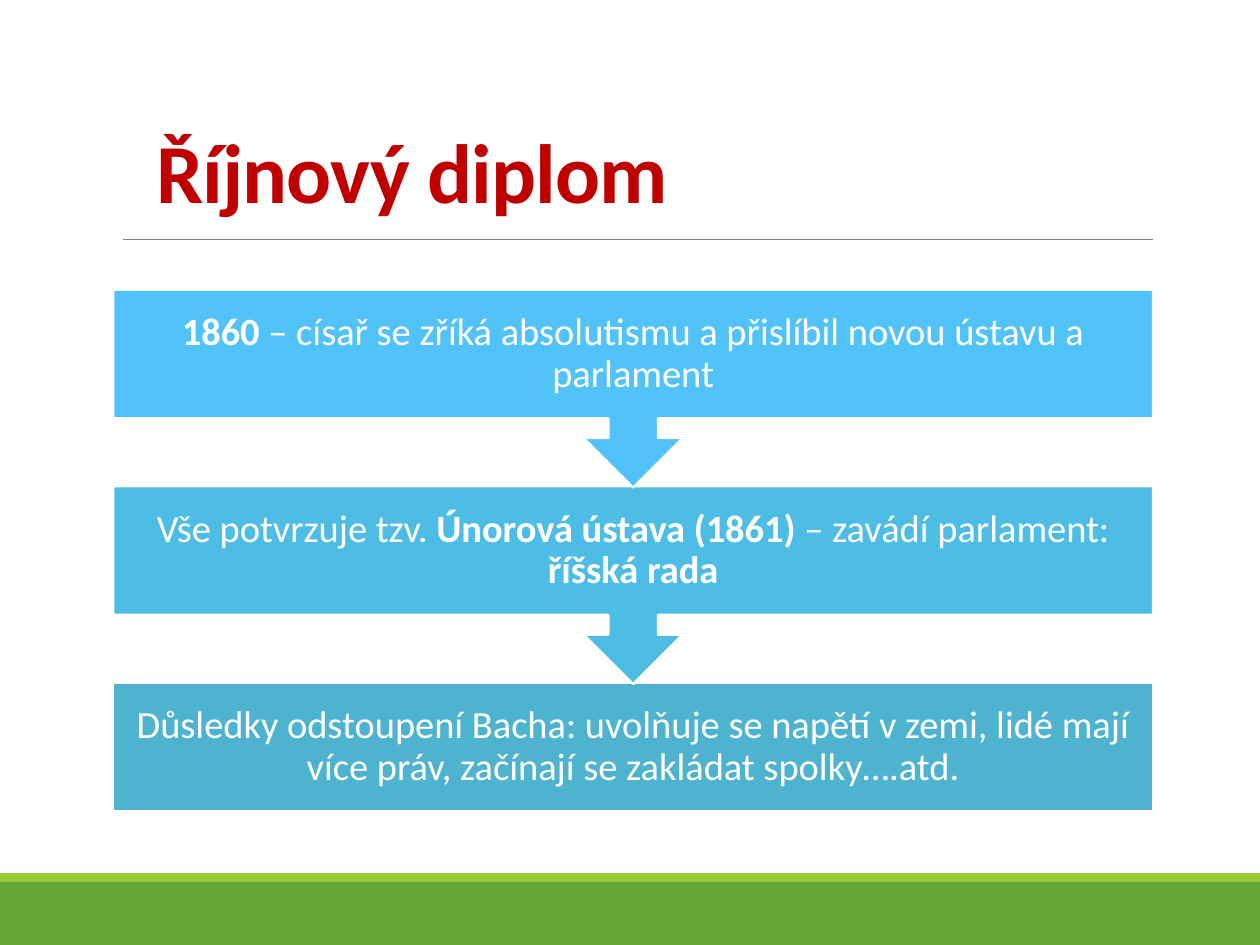
import pptx
import pptx.util
from lxml import etree
from pptx.dml.color import RGBColor
from pptx.enum.shapes import MSO_CONNECTOR, MSO_SHAPE
from pptx.enum.text import MSO_ANCHOR, PP_ALIGN
from pptx.oxml.ns import qn
from pptx.util import Inches


class Theme:
    font = "Calibri"
    title_size = pptx.util.Pt(48)
    body_size = pptx.util.Pt(22)
    title = RGBColor.from_string("C00000")
    white = RGBColor.from_string("FFFFFF")
    rule = RGBColor.from_string("808080")
    footer = RGBColor.from_string("63A537")
    footer_edge = RGBColor.from_string("99CB38")
    steps = [RGBColor.from_string(code) for code in ("51C3F9", "4DBDE6", "4EB3CF")]


def add_filled_shape(kind, left, top, width, height, color):
    shape = slide.shapes.add_shape(
        kind, Inches(left), Inches(top), Inches(width), Inches(height))
    shape.shadow.inherit = False
    shape.fill.solid()
    shape.fill.fore_color.rgb = color
    shape.line.fill.background()
    return shape


presentation = pptx.Presentation()
presentation.slide_width = Inches(10)
presentation.slide_height = Inches(7.5)
slide = presentation.slides.add_slide(presentation.slide_layouts[6])

# Footer bands and the rule under the title
add_filled_shape(MSO_SHAPE.RECTANGLE, 0, 7, 10, 0.5, Theme.footer)
add_filled_shape(MSO_SHAPE.RECTANGLE, 0, 6.93, 10, 0.07, Theme.footer_edge)
rule = slide.shapes.add_connector(
    MSO_CONNECTOR.STRAIGHT, Inches(0.98), Inches(1.9), Inches(9.15), Inches(1.9))
rule.line.color.rgb = Theme.rule
rule.line.width = pptx.util.Pt(0.5)
etree.SubElement(rule._element.spPr, qn("a:effectLst"))

# Title
title = slide.shapes.add_textbox(Inches(1.14), Inches(0.21), Inches(8.25), Inches(1.59))
title.text_frame.word_wrap = True
title.text_frame.vertical_anchor = MSO_ANCHOR.BOTTOM
paragraph = title.text_frame.paragraphs[0]
paragraph.line_spacing = 0.85
paragraph.font.name = Theme.font
paragraph.font.size = Theme.title_size
paragraph.font.bold = True
paragraph.font.color.rgb = Theme.title
run = paragraph.add_run()
run.text = "Říjnový diplom"
run._r.get_or_add_rPr().set("spc", "-50")

# Steps: each is a list of (text, bold) runs
steps = [
    [("1860", True),
     (" – císař se zříká absolutismu a přislíbil novou ústavu a parlament", False)],
    [("Vše potvrzuje tzv. ", False), ("Únorová ústava (1861)", True),
     (" – zavádí parlament: ", False), ("říšská rada", True)],
    [("Důsledky odstoupení Bacha: uvolňuje se napětí v zemi, lidé mají více práv, "
      "začínají se zakládat spolky….atd.", False)],
]
first_top, step_pitch = 2.3, 1.56
last = len(steps) - 1

# Drawn from the bottom up, so that each arrow tip lies over the next step
for index in range(last, -1, -1):
    if index == last:
        kind, height = MSO_SHAPE.RECTANGLE, 1.02
    else:
        kind, height = MSO_SHAPE.DOWN_ARROW_CALLOUT, 1.57
    step = add_filled_shape(
        kind, 0.9, first_top + index * step_pitch, 8.25, height, Theme.steps[index])
    step.line.color.rgb = Theme.white
    step.line.width = pptx.util.Pt(1.25)

    frame = step.text_frame
    frame.word_wrap = True
    frame.vertical_anchor = MSO_ANCHOR.MIDDLE
    frame.margin_left = frame.margin_right = Inches(0.17)
    frame.margin_top = frame.margin_bottom = Inches(0.17)
    paragraph = frame.paragraphs[0]
    paragraph.alignment = PP_ALIGN.CENTER
    paragraph.line_spacing = 0.9
    paragraph.font.name = Theme.font
    paragraph.font.size = Theme.body_size
    paragraph.font.color.rgb = Theme.white
    for text, bold in steps[index]:
        run = paragraph.add_run()
        run.text = text
        run.font.bold = bold

presentation.save("out.pptx")
